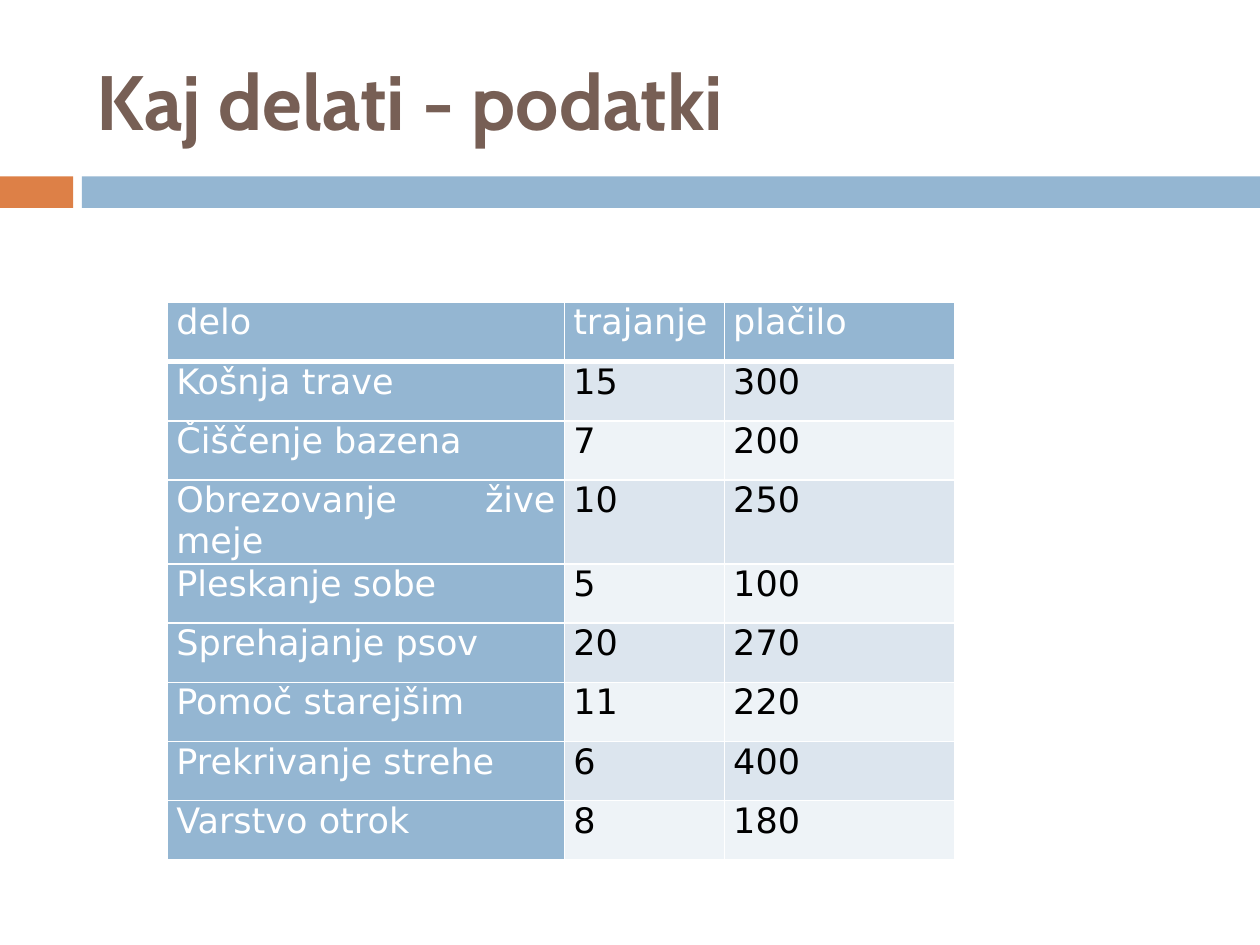
"""Build a slide with a table of jobs, their duration and pay."""
from lxml.etree import SubElement
from pptx import Presentation
from pptx.dml.color import RGBColor
from pptx.enum.shapes import MSO_SHAPE as Shape
from pptx.enum.text import MSO_ANCHOR as Anchor, PP_ALIGN as Align
from pptx.oxml.ns import qn
from pptx.util import Inches, Pt

COLORS = {
    "title": "775F55",
    "accent": "DD8047",
    "blue": "94B6D2",
    "band_dark": "DCE5EE",
    "band_light": "EEF3F7",
    "white": "FFFFFF",
    "black": "000000",
}
COLUMN_WIDTHS = (3.15, 1.27, 1.83)
ROW_HEIGHT = 0.47
JOBS = (
    ("delo", "trajanje", "plačilo"),
    ("Košnja trave", "15", "300"),
    ("Čiščenje bazena", "7", "200"),
    ("Obrezovanje žive meje", "10", "250"),
    ("Pleskanje sobe", "5", "100"),
    ("Sprehajanje psov", "20", "270"),
    ("Pomoč starejšim", "11", "220"),
    ("Prekrivanje strehe", "6", "400"),
    ("Varstvo otrok", "8", "180"),
)


def color(name):
    return RGBColor.from_string(COLORS[name])


def add_text(paragraph, text, font_name, size, color_name, bold=False):
    run = paragraph.add_run()
    run.text = text
    run.font.name = font_name
    run.font.size = Pt(size)
    run.font.bold = bold
    run.font.color.rgb = color(color_name)


def add_bar(slide, left, width, color_name):
    shape = slide.shapes.add_shape(
        Shape.RECTANGLE, Inches(left), Inches(1.4), Inches(width), Inches(0.25))
    shape.shadow.inherit = False
    shape.fill.solid()
    shape.fill.fore_color.rgb = color(color_name)
    shape.line.fill.background()


def add_title(slide, text):
    box = slide.shapes.add_textbox(
        Inches(0.67), Inches(0.25), Inches(8.92), Inches(1.08))
    frame = box.text_frame
    frame.word_wrap = True
    frame.vertical_anchor = Anchor.MIDDLE
    add_text(frame.paragraphs[0], text, "Cabin", 44, "title", bold=True)


def add_borders(cell, bottom_width):
    properties = cell._tc.get_or_add_tcPr()
    for side, width in (("L", 1), ("R", 1), ("T", 1), ("B", bottom_width)):
        line = SubElement(properties, qn(f"a:ln{side}"), w=str(Pt(width)))
        fill = SubElement(line, qn("a:solidFill"))
        SubElement(fill, qn("a:srgbClr"), val=COLORS["white"])


def fill_cell(cell, text, fill_name, text_color, bottom_width):
    cell.margin_left = cell.margin_right = Inches(0.07)
    cell.margin_top = cell.margin_bottom = 0
    add_borders(cell, bottom_width)
    cell.fill.solid()
    cell.fill.fore_color.rgb = color(fill_name)
    paragraph = cell.text_frame.paragraphs[0]
    paragraph.alignment = Align.JUSTIFY
    add_text(paragraph, text, "DejaVu Sans", 20, text_color)


def add_jobs_table(slide):
    table = slide.shapes.add_table(
        len(JOBS), len(COLUMN_WIDTHS), Inches(1.33), Inches(2.4),
        Inches(sum(COLUMN_WIDTHS)), Inches(ROW_HEIGHT * len(JOBS))).table
    table.first_col = True
    for column, width in zip(table.columns, COLUMN_WIDTHS):
        column.width = Inches(width)
    for row_index, job in enumerate(JOBS):
        table.rows[row_index].height = Inches(ROW_HEIGHT)
        band = "band_dark" if row_index % 2 else "band_light"
        bottom_width = 3 if row_index == 0 else 1
        for column_index, text in enumerate(job):
            is_heading = row_index == 0 or column_index == 0
            fill_name, text_color = ("blue", "white") if is_heading else (band, "black")
            fill_cell(table.cell(row_index, column_index), text,
                      fill_name, text_color, bottom_width)


def main():
    presentation = Presentation()
    presentation.slide_width = Inches(10)
    presentation.slide_height = Inches(7.5)
    slide = presentation.slides.add_slide(presentation.slide_layouts[6])
    add_bar(slide, 0, 0.58, "accent")
    add_bar(slide, 0.65, 9.35, "blue")
    add_title(slide, "Kaj delati - podatki")
    add_jobs_table(slide)
    presentation.save("out.pptx")


if __name__ == "__main__":
    main()
